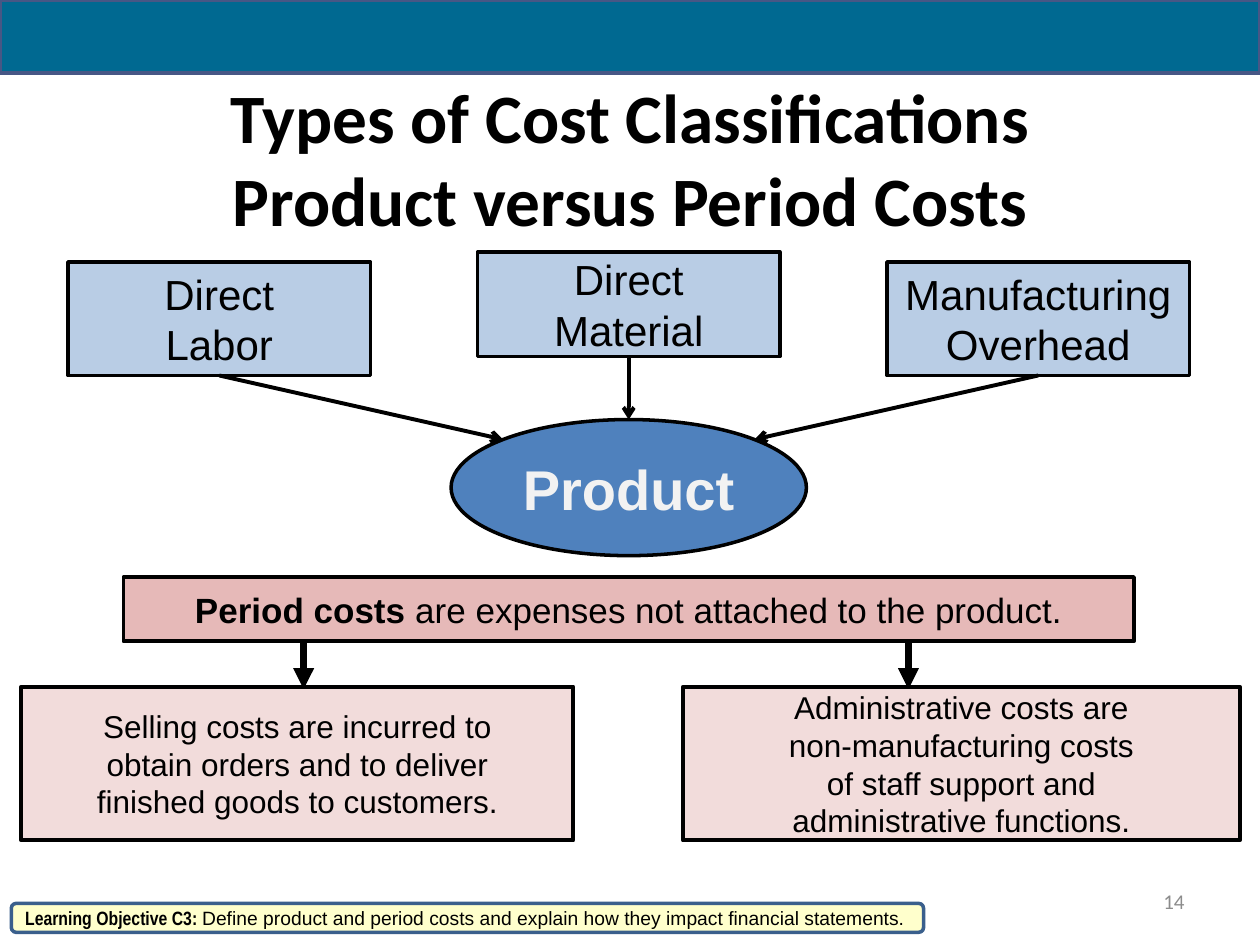
from math import cos, pi, sin
from lxml.etree import SubElement
from pptx import Presentation
from pptx.dml.color import RGBColor
from pptx.enum.shapes import MSO_CONNECTOR, MSO_SHAPE
from pptx.enum.text import MSO_ANCHOR, MSO_AUTO_SIZE, PP_ALIGN
from pptx.oxml.ns import qn
from pptx.util import Inches, Pt

# Grid of 100 columns and 75 rows
COLS, ROWS = 100, 75
CELL = Inches(10) // COLS
BLACK = "000000"


def tint(color, code):
    color.rgb = RGBColor.from_string(code)


def span(*cells):
    return [round(cell * CELL) for cell in cells]


def style(font, size, code=BLACK, name="Arial", bold=None):
    font.size, font.name, font.bold = Pt(size), name, bold
    tint(font.color, code)


def setup(frame, wrap=True):
    """Centre the text vertically and return its paragraph."""
    frame.word_wrap = wrap
    frame.auto_size = MSO_AUTO_SIZE.NONE
    frame.vertical_anchor = MSO_ANCHOR.MIDDLE
    par = frame.paragraphs[0]
    par.alignment = PP_ALIGN.CENTER
    return par


def block(slide, box, fill, edge=BLACK, width=2.0, kind=MSO_SHAPE.RECTANGLE):
    shape = slide.shapes.add_shape(kind, *span(*box))
    shape.shadow.inherit = False
    shape.fill.solid()
    tint(shape.fill.fore_color, fill)
    tint(shape.line.color, edge)
    shape.line.width = Pt(width)
    return shape


def label(shape, text, size, wrap=True, **look):
    par = setup(shape.text_frame, wrap)
    par.text = text
    style(par.font, size, **look)


def lead(shape, head, rest, size, wrap=True, face="Arial"):
    """Bold opening words followed by plain text."""
    par = setup(shape.text_frame, wrap)
    for text, name, bold in ((head, face, True), (rest, "Arial", False)):
        run = par.add_run()
        run.text = text
        style(run.font, size, name=name, bold=bold)
    return par


def arrow(slide, start, end, width=2.25, tip="arrow"):
    line = slide.shapes.add_connector(
        MSO_CONNECTOR.STRAIGHT, *span(*start, *end))
    tint(line.line.color, BLACK)
    line.line.width = Pt(width)
    SubElement(line.line._get_or_add_ln(), qn("a:tailEnd"), type=tip)
    SubElement(line._element.spPr, qn("a:effectLst"))


def header(slide, box):
    left, top, wide, high = box
    block(slide, (left, top, wide, 5.8), "006991", "475785", 2.25)
    title = slide.shapes.title
    title.left, title.top, title.width, title.height = span(
        left + 5, top + 5.8, wide - 10, high - 5.8)
    label(title, "Types of Cost Classifications\nProduct versus Period Costs",
          39.6, name="Calibri", bold=True)


def product(slide, box):
    """Three inputs that flow into the product oval."""
    left, top, wide, high = box
    mid = left + wide / 2
    over, tall = 28.2, 10.8
    oval = block(slide, (mid - over / 2, top + high - tall, over, tall),
                 "4F81BD", kind=MSO_SHAPE.OVAL)
    label(oval, "Product", 32, wrap=False, code="F2F2F2", bold=True)
    hub = top + high - tall / 2

    inputs = (("Direct\nLabor", -1, 0.8, 9),
              ("Direct\nMaterial", 0, 0, 8.3),
              ("Manufacturing Overhead", 1, 0.8, 9))
    for text, side, drop, deep in inputs:
        x = mid + side * 32.5
        part = block(slide, (x - 12, top + drop, 24, deep), "B9CDE5")
        label(part, text, 24)
        turn = side * pi / 4
        goal = mid + over / 2 * sin(turn), hub - tall / 2 * cos(turn)
        arrow(slide, (x, top + drop + deep), goal)


def period(slide, box):
    """Definition bar with an arrow to each kind of period cost."""
    left, top, wide, high = box
    kinds = (("Administrative costs are\nnon-manufacturing costs\n"
              "of staff support and\nadministrative functions.",
              52.5, 44.2, 70.4),
             ("Selling costs are incurred to\nobtain orders and to deliver\n"
              "finished goods to customers.", 0, 43.8, 22.4))
    deep = 12.2
    low = top + high - deep
    for text, x, size, stem in kinds:
        arrow(slide, (left + stem, top + 3), (left + stem, low + 0.2),
              4, "triangle")
        part = block(slide, (left + x, low, size, deep), "F2DCDB", width=2.25)
        label(part, text, 18, wrap=False)
    bar = block(slide, (left + 8.1, top, 80.2, 5.1), "E6B9B8", width=2.25)
    lead(bar, "Period costs ", "are expenses not attached to the product.",
         20, wrap=False)


def footer(slide, box):
    left, top, wide, high = box
    page = slide.shapes.add_textbox(*span(left + wide - 23.3, top, 23.3, 4))
    label(page, "14", 12, code="8C8C8C", name="Calibri")
    page.text_frame.paragraphs[0].alignment = PP_ALIGN.RIGHT
    goal = block(slide, (left, top + high - 2.3, 72.4, 2.3), "FFFFCC",
                 "3A5F8C", kind=MSO_SHAPE.ROUNDED_RECTANGLE)
    par = lead(goal, "Learning Objective C3: ",
               "Define product and period costs and explain how they "
               "impact financial statements.", 11, face="Arial Narrow")
    par.alignment = PP_ALIGN.LEFT


def main():
    deck = Presentation()
    deck.slide_width, deck.slide_height = span(COLS, ROWS)
    slide = deck.slides.add_slide(deck.slide_layouts[5])
    header(slide, (0, 0, COLS, 19.1))
    product(slide, (5.4, 20, 89, 24.1))
    period(slide, (1.7, 45.8, 96.7, 20.9))
    footer(slide, (0.9, 69.5, 94.1, 4.5))
    deck.save("out.pptx")


if __name__ == "__main__":
    main()
